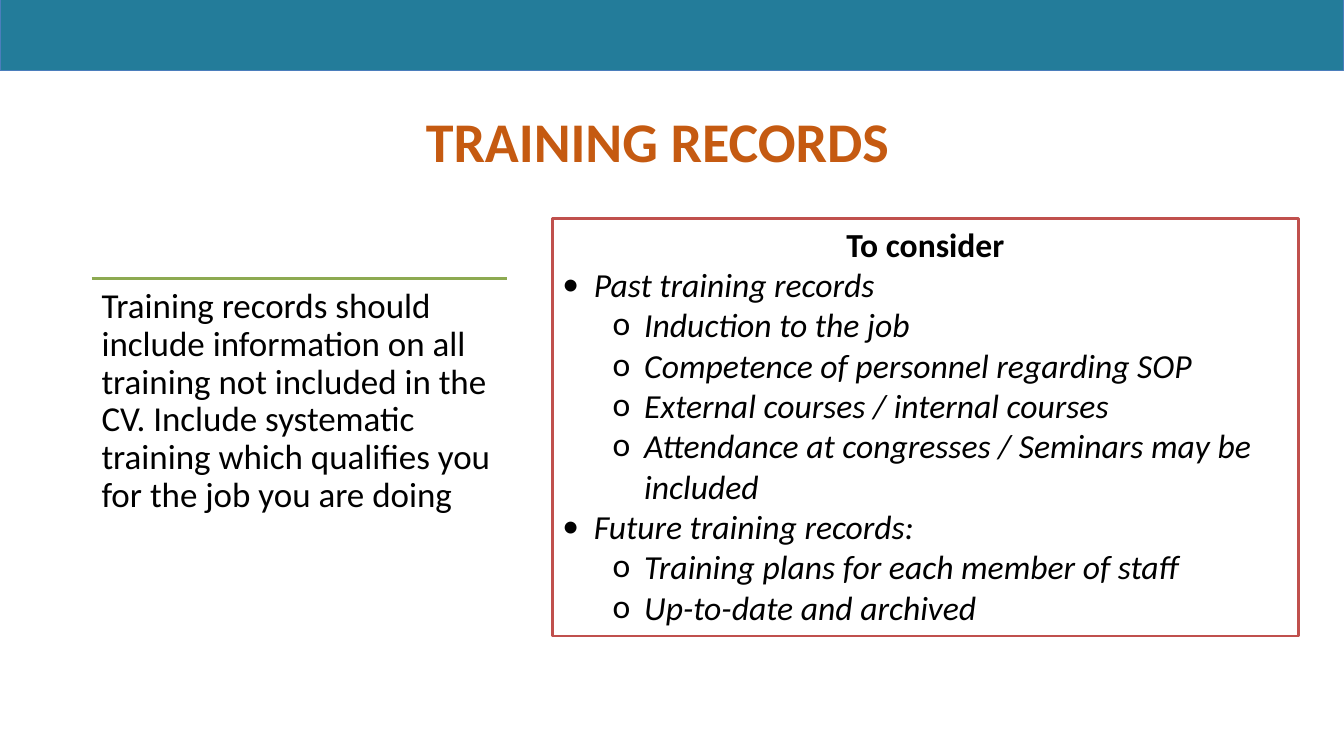
"""Builds the training records slide."""
from lxml import etree
from pptx import Presentation, util as u
from pptx.dml.color import RGBColor
from pptx.enum import shapes, text
from pptx.oxml.ns import qn

COLORS = {"band": "237C9A", "band_line": "4B7EBC", "title": "C55A11", "rule": "8DAA51",
          "box_line": "C0504D", "text": "000000", "white": "FFFFFF"}
ITEMS = [
    (0, "Past training records"),
    (1, "Induction to the job"),
    (1, "Competence of personnel regarding SOP"),
    (1, "External courses / internal courses"),
    (1, "Attendance at congresses / Seminars may be included"),
    (0, "Future training records:"),
    (1, "Training plans for each member of staff"),
    (1, "Up-to-date and archived"),
]
BULLETS = "•o"


def rgb(name):
    return RGBColor.from_string(COLORS[name])


def write(p, content, size=24, color="text", bold=False, italic=False,
          align=text.PP_ALIGN.LEFT, level=None, spacing=None):
    p.alignment = align
    if spacing:
        p.line_spacing = spacing
    if level is not None:
        p.level = level
        pPr = p._p.get_or_add_pPr()
        pPr.set("marL", str(u.Pt(22.5 + 36 * level)))
        pPr.set("indent", str(u.Pt(-22.5)))
        etree.SubElement(pPr, qn("a:buFont")).set("typeface", "Calibri")
        etree.SubElement(pPr, qn("a:buChar")).set("char", BULLETS[level])
    r = p.add_run()
    r.text = content
    r.font.name = "Calibri"
    r.font.size = u.Pt(size)
    r.font.bold, r.font.italic = bold, italic
    r.font.color.rgb = rgb(color)


class Deck:
    def __init__(self):
        self.prs = Presentation()
        self.prs.slide_width, self.prs.slide_height = u.Pt(960), u.Pt(540)
        self.s = self.prs.slides.add_slide(self.prs.slide_layouts[6])

    def rect(self, x, y, w, h, fill, line, weight):
        sp = self.s.shapes.add_shape(shapes.MSO_SHAPE.RECTANGLE,
                                     u.Pt(x), u.Pt(y), u.Pt(w), u.Pt(h))
        sp.shadow.inherit = False
        sp.fill.solid()
        sp.fill.fore_color.rgb = rgb(fill)
        sp.line.color.rgb = rgb(line)
        sp.line.width = u.Pt(weight)
        return sp

    def label(self, x, y, w, h, content, insets, **fmt):
        tf = self.s.shapes.add_textbox(u.Pt(x), u.Pt(y), u.Pt(w), u.Pt(h)).text_frame
        tf.word_wrap = True
        tf.margin_left, tf.margin_top, tf.margin_right, tf.margin_bottom = map(u.Pt, insets)
        write(tf.paragraphs[0], content, **fmt)

    def rule(self, x1, y1, x2, y2, color, weight):
        c = self.s.shapes.add_connector(shapes.MSO_CONNECTOR.STRAIGHT,
                                        u.Pt(x1), u.Pt(y1), u.Pt(x2), u.Pt(y2))
        c.line.color.rgb = rgb(color)
        c.line.width = u.Pt(weight)
        etree.SubElement(c._element.spPr, qn("a:effectLst"))

    def checklist(self, x, y, w, h, heading, items):
        tf = self.rect(x, y, w, h, "white", "box_line", 2).text_frame
        tf.word_wrap = True
        tf.vertical_anchor = text.MSO_ANCHOR.TOP
        tf.auto_size = text.MSO_AUTO_SIZE.SHAPE_TO_FIT_TEXT
        write(tf.paragraphs[0], heading, bold=True, align=text.PP_ALIGN.CENTER)
        for level, content in items:
            write(tf.add_paragraph(), content, italic=True, level=level)


def main():
    deck = Deck()
    deck.rect(0, 0, 960, 50.4, "band", "band_line", 0.75)
    deck.label(25.9, 72.7, 896.4, 46.1, "TRAINING RECORDS ", (7.2, 3.6, 7.2, 0),
               size=40, color="title", bold=True, align=text.PP_ALIGN.CENTER)
    deck.rule(65.5, 198.7, 362.5, 198.7, "rule", 2)
    deck.label(65.5, 198.7, 297, 268.6,
               "Training records should include information on all training not included "
               "in the CV. Include systematic training which qualifies you for the job "
               "you are doing", (7.2,) * 4, size=25, spacing=0.9)
    deck.checklist(394.6, 156.2, 532.8, 298.1, "To consider", ITEMS)
    deck.prs.save("out.pptx")


if __name__ == "__main__":
    main()
